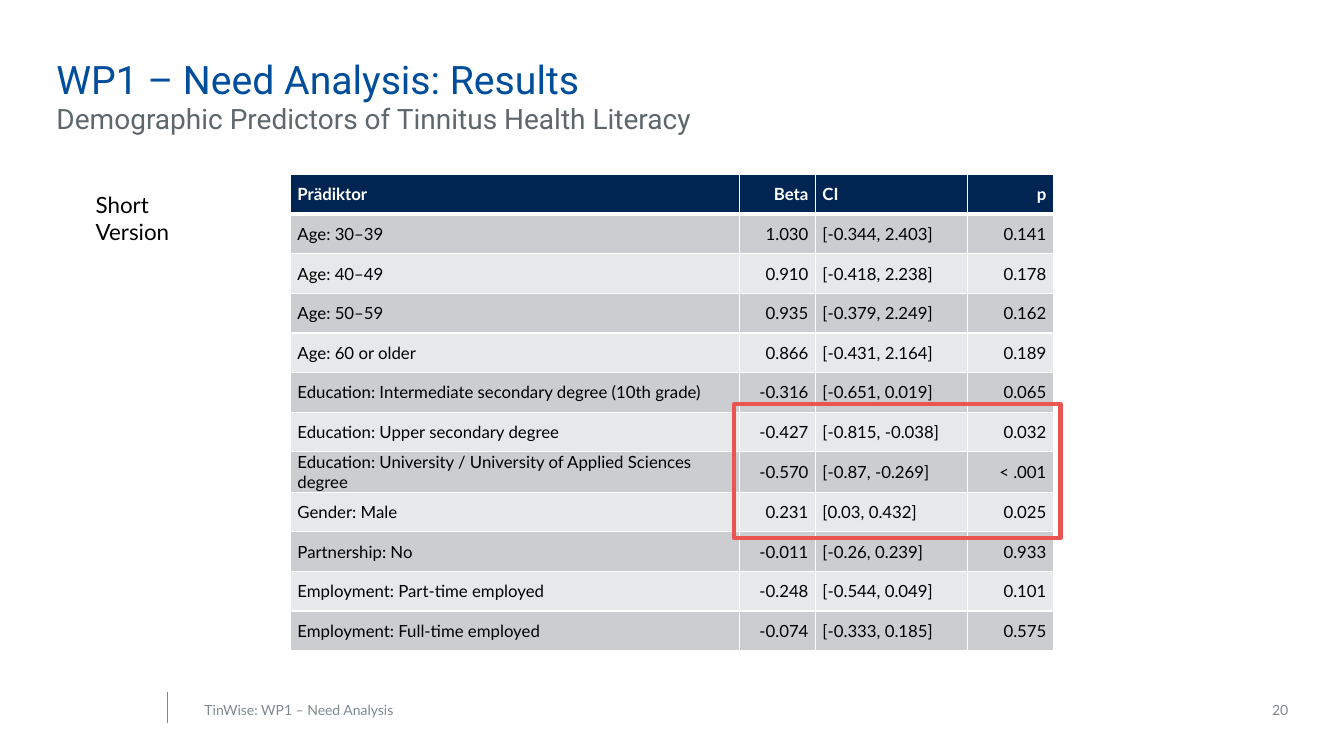
from dataclasses import dataclass

from lxml import etree
from pptx import Presentation
from pptx.dml.color import RGBColor
from pptx.enum.shapes import MSO_CONNECTOR, MSO_SHAPE
from pptx.enum.text import MSO_ANCHOR, PP_ALIGN
from pptx.oxml.ns import qn
from pptx.util import Pt

LEFT, RIGHT = PP_ALIGN.LEFT, PP_ALIGN.RIGHT
TOP, MIDDLE = MSO_ANCHOR.TOP, MSO_ANCHOR.MIDDLE
RECTANGLE, STRAIGHT = MSO_SHAPE.RECTANGLE, MSO_CONNECTOR.STRAIGHT


@dataclass(frozen=True)
class Theme:
    heading_font: str = "Roboto"
    body_font: str = "Lato"
    title: str = "004D9B"
    subtitle: str = "5E676C"
    footer: str = "7E898F"
    text: str = "000000"
    white: str = "FFFFFF"
    header_fill: str = "002552"
    bands: tuple = ("CCCDD1", "E7E8E9")
    highlight: str = "EA5451"
    title_size: int = 28
    subtitle_size: int = 20
    label_size: int = 16
    table_size: int = 12
    footer_size: int = 10


theme = Theme()


def add_run(paragraph, text, size, color, font=theme.body_font, bold=False):
    run = paragraph.add_run()
    run.text = text
    run.font.name = font
    run.font.size = Pt(size)
    run.font.bold = bold
    run.font.color.rgb = RGBColor.from_string(color)


def border_cell(cell, bottom_width):
    """Draw white lines on all four sides; call before the cell is filled."""
    properties = cell._tc.get_or_add_tcPr()
    for side, width in (("L", 1), ("R", 1), ("T", 1), ("B", bottom_width)):
        line = etree.SubElement(properties, qn(f"a:ln{side}"), w=str(Pt(width)))
        fill = etree.SubElement(line, qn("a:solidFill"))
        etree.SubElement(fill, qn("a:srgbClr"), val=theme.white)


presentation = Presentation()
presentation.slide_width, presentation.slide_height = Pt(960), Pt(540)
slide = presentation.slides.add_slide(presentation.slide_layouts[6])
shapes = slide.shapes

# Footer rule
footer_rule = shapes.add_connector(STRAIGHT, Pt(119.5), Pt(494.6), Pt(119.5), Pt(516.2))
footer_rule.line.color.rgb = RGBColor.from_string(theme.footer)
footer_rule.line.width = Pt(1)
etree.SubElement(footer_rule._element.spPr, qn("a:effectLst"))

# Title, subtitle, page number, footer and table label
texts = [
    ("WP1 – Need Analysis: Results", (40.3, 39.6, 719.3, 31.7), theme.title_size,
     theme.title, theme.heading_font, LEFT, TOP, 0),
    ("Demographic Predictors of Tinnitus Health Literacy", (40.3, 72.7, 719.3, 19.4),
     theme.subtitle_size, theme.subtitle, theme.heading_font, LEFT, TOP, 0),
    ("20", (704.2, 496.8, 216, 20.2), theme.footer_size,
     theme.footer, theme.body_font, RIGHT, MIDDLE, 0),
    ("TinWise: WP1 – Need Analysis", (139, 496.8, 324, 20.2), theme.footer_size,
     theme.footer, theme.body_font, LEFT, MIDDLE, 7.2),
    ("Short Version", (68.4, 136.8, 89.3, 19.4), theme.label_size,
     theme.text, theme.body_font, LEFT, TOP, 0),
]
for text, bounds, size, color, font, alignment, anchor, inset in texts:
    frame = shapes.add_textbox(*map(Pt, bounds)).text_frame
    frame.word_wrap = True
    frame.vertical_anchor = anchor
    frame.margin_left = frame.margin_right = Pt(inset)
    frame.margin_top = frame.margin_bottom = 0
    frame.paragraphs[0].alignment = alignment
    add_run(frame.paragraphs[0], text, size, color, font)

# Regression table
predictors = [
    ("Prädiktor", "Beta", "CI", "p"),
    ("Age: 30–39", "1.030", "[-0.344, 2.403]", "0.141"),
    ("Age: 40–49", "0.910", "[-0.418, 2.238]", "0.178"),
    ("Age: 50–59", "0.935", "[-0.379, 2.249]", "0.162"),
    ("Age: 60 or older", "0.866", "[-0.431, 2.164]", "0.189"),
    ("Education: Intermediate secondary degree (10th grade)",
     "-0.316", "[-0.651, 0.019]", "0.065"),
    ("Education: Upper secondary degree", "-0.427", "[-0.815, -0.038]", "0.032"),
    ("Education: University / University of Applied Sciences degree",
     "-0.570", "[-0.87, -0.269]", "< .001"),
    ("Gender: Male", "0.231", "[0.03, 0.432]", "0.025"),
    ("Partnership: No", "-0.011", "[-0.26, 0.239]", "0.933"),
    ("Employment: Part-time employed", "-0.248", "[-0.544, 0.049]", "0.101"),
    ("Employment: Full-time employed", "-0.074", "[-0.333, 0.185]", "0.575"),
]
column_widths = (321, 54, 108.7, 61.3)
column_alignments = (LEFT, RIGHT, LEFT, RIGHT)
row_height = 28.3
table = shapes.add_table(
    len(predictors), len(column_widths), Pt(207.5), Pt(124.7),
    Pt(sum(column_widths)), Pt(row_height * len(predictors))).table
for column, width in zip(table.columns, column_widths):
    column.width = Pt(width)

for row_index, predictor in enumerate(predictors):
    is_header = row_index == 0
    table.rows[row_index].height = Pt(row_height)
    row_fill = theme.header_fill if is_header else theme.bands[(row_index - 1) % 2]
    for column_index, value in enumerate(predictor):
        cell = table.cell(row_index, column_index)
        border_cell(cell, 3 if is_header else 1)
        cell.fill.solid()
        cell.fill.fore_color.rgb = RGBColor.from_string(row_fill)
        cell.vertical_anchor = MIDDLE
        cell.margin_left = cell.margin_right = Pt(5)
        cell.margin_top = cell.margin_bottom = 0
        paragraph = cell.text_frame.paragraphs[0]
        paragraph.alignment = column_alignments[column_index]
        add_run(paragraph, value, theme.table_size,
                theme.white if is_header else theme.text, bold=is_header)

# Frame around the significant predictors
significant_frame = shapes.add_shape(RECTANGLE, Pt(524.2), Pt(288.7), Pt(233.3), Pt(95.8))
significant_frame.shadow.inherit = False
significant_frame.fill.background()
significant_frame.line.color.rgb = RGBColor.from_string(theme.highlight)
significant_frame.line.width = Pt(3)

presentation.save("out.pptx")
